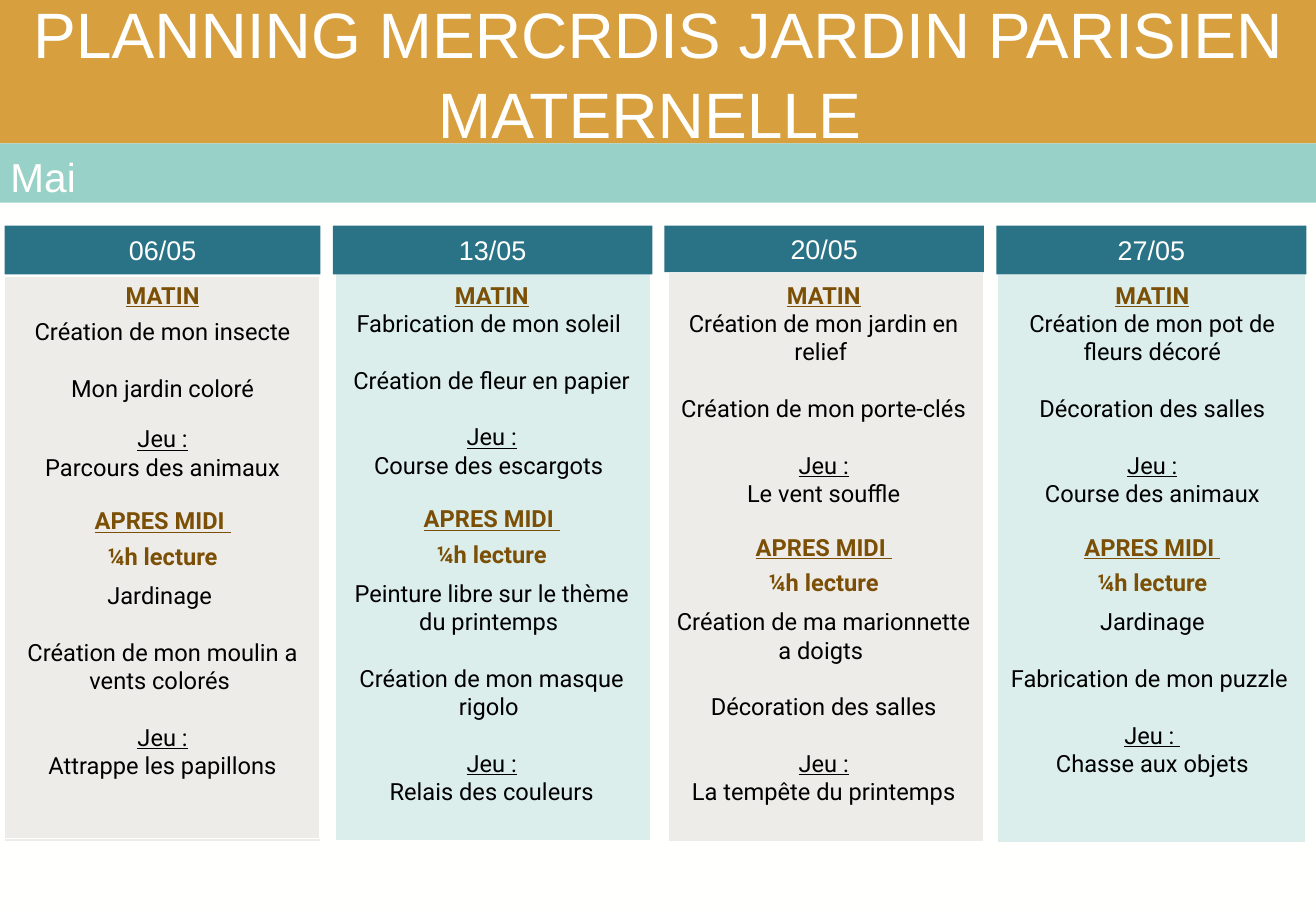
"""Build the May Wednesday planning slide for the nursery school."""
from lxml import etree
from pptx import Presentation
from pptx import util as u
from pptx.dml import color
from pptx.enum import shapes, text
from pptx.oxml import ns

COLOURS = {
    "paper": "FFFFFE",
    "gold": "D89F3F",
    "mint": "98D1C8",
    "teal": "2A7387",
    "grey": "EEECE8",
    "brown": "7B5006",
    "black": "000000",
}
LINE_GAP = 16.8
MINT_ALPHA = 35

COLUMNS = [
    {
        "date": "06/05",
        "header": (0.1, 4.72, 6.6, 1.02),
        "panel": (0.1, 5.79, 6.6, 11.81),
        "text": (0.1, 5.74, 6.6, 11.84),
        "fill": "grey",
        "gaps": (5, 13),
        "morning": ("Création de mon insecte", "Mon jardin coloré",
                    "Jeu :", "Parcours des animaux"),
        "afternoon": ("Jardinage ", "Création de mon moulin a vents colorés ",
                      "Jeu :", "Attrappe les papillons"),
    },
    {
        "date": "13/05",
        "header": (6.96, 4.72, 6.68, 1.02),
        "panel": (7.01, 5.69, 6.6, 11.89),
        "text": (6.93, 5.74, 6.7, 11.84),
        "fill": "mint",
        "gaps": (0, LINE_GAP),
        "morning": ("Fabrication de mon soleil ", "Création de fleur en papier",
                    "Jeu :", "Course des escargots "),
        "afternoon": ("Peinture libre sur le thème du printemps ",
                      "Création de mon masque rigolo ",
                      "Jeu :", "Relais des couleurs"),
    },
    {
        "date": "20/05",
        "header": (13.89, 4.72, 6.68, 0.97),
        "panel": (13.97, 5.69, 6.6, 11.91),
        "text": (13.87, 5.74, 6.7, 11.84),
        "fill": "grey",
        "gaps": (0, LINE_GAP),
        "morning": ("Création de mon jardin en relief ", "Création de mon porte-clés",
                    "Jeu :", "Le vent souffle"),
        "afternoon": ("Création de ma marionnette a doigts ", "Décoration des salles",
                      "Jeu :", "La tempête du printemps"),
    },
    {
        "date": "27/05",
        "header": (20.83, 4.72, 6.48, 1.02),
        "panel": (20.85, 5.74, 6.45, 11.89),
        "text": (20.85, 5.74, 6.48, 11.84),
        "fill": "mint",
        "gaps": (0, LINE_GAP),
        "morning": ("Création de mon pot de fleurs décoré", "Décoration des salles",
                    "Jeu :", "Course des animaux"),
        "afternoon": ("Jardinage", "Fabrication de mon puzzle ",
                      "Jeu : ", "Chasse aux objets"),
    },
]


def rgb(name):
    return color.RGBColor.from_string(COLOURS[name])


def place(shape, frame):
    shape.left, shape.top, shape.width, shape.height = map(u.Cm, frame)


def paint(shape, fill):
    shape.fill.solid()
    shape.fill.fore_color.rgb = rgb(fill)


def add_rect(page, frame, fill=None, outlined=False):
    box = page.shapes.add_shape(shapes.MSO_SHAPE.RECTANGLE, *map(u.Cm, frame))
    box.shadow.inherit = False
    if fill:
        paint(box, fill)
    else:
        box.fill.background()
    if outlined:
        box.line.color.rgb = rgb("paper")
        box.line.width = u.Pt(0.75)
    else:
        box.line.fill.background()
    return box


def add_span(para, words, size, font, colour, bold=False, underline=False):
    span = para.add_run()
    span.text = words
    span.font.size = u.Pt(size)
    span.font.name = font
    span.font.color.rgb = rgb(colour)
    span.font.bold = bold
    span.font.underline = underline


def write_label(box, words, size, align, anchor):
    frame = box.text_frame
    frame.word_wrap = True
    frame.auto_size = text.MSO_AUTO_SIZE.NONE
    frame.vertical_anchor = anchor
    para = frame.paragraphs[0]
    para.alignment = align
    para.space_before = u.Pt(0)
    add_span(para, words, size, "Arial", "paper")


def add_panel(page, column):
    panel = add_rect(page, column["panel"], column["fill"], outlined=True)
    if column["fill"] == "mint":
        tint = panel.element.find(".//" + ns.qn("a:srgbClr"))
        etree.SubElement(tint, ns.qn("a:alpha"), val=str(MINT_ALPHA * 1000))
    return panel


def programme(column):
    """List each line as words, space before and whether it is a heading."""
    first_gap, game_gap = column["gaps"]
    craft, second, game, game_name = column["morning"]
    yield "MATIN", 0, True
    yield craft, first_gap, False
    yield second, LINE_GAP, False
    yield game, game_gap, False
    yield game_name, 0, False
    yield "APRES MIDI ", LINE_GAP, True
    yield "¼h lecture", 0, True
    for words, gap in zip(column["afternoon"], (0, LINE_GAP, LINE_GAP, 0)):
        yield words, gap, False


def write_programme(body, column):
    place(body, column["text"])
    frame = body.text_frame
    frame.word_wrap = True
    frame.auto_size = text.MSO_AUTO_SIZE.NONE
    frame.vertical_anchor = text.MSO_ANCHOR.TOP
    for number, (words, gap, heading) in enumerate(programme(column)):
        para = frame.add_paragraph() if number else frame.paragraphs[0]
        props = para._p.get_or_add_pPr()
        props.set("marL", "0")
        props.set("indent", "0")
        etree.SubElement(props, ns.qn("a:buNone"))
        para.alignment = text.PP_ALIGN.CENTER
        para.space_before = u.Pt(gap)
        if heading and number:
            para.line_spacing = 0.9
            para.space_after = u.Pt(6)
        underline = words.startswith("Jeu") or (heading and "lecture" not in words)
        add_span(para, words, 14, "Roboto", "brown" if heading else "black",
                 heading, underline)


def main():
    deck = Presentation()
    deck.slide_width, deck.slide_height = u.Cm(27.51), u.Cm(19.05)
    page = deck.slides.add_slide(deck.slide_layouts.get_by_name("Comparison"))
    page.background.fill.solid()
    page.background.fill.fore_color.rgb = rgb("paper")
    centre, middle = text.PP_ALIGN.CENTER, text.MSO_ANCHOR.MIDDLE

    title = page.shapes.title
    place(title, (0, 0, 27.53, 3))
    paint(title, "gold")
    write_label(title, "PLANNING MERCRDIS JARDIN PARISIEN MATERNELLE ", 38, centre, middle)
    title.text_frame.paragraphs[0].line_spacing = 1.04

    panels = [add_panel(page, column) for column in reversed(COLUMNS)]
    panels.append(add_rect(page, (0.08, 5.69, 6.6, 11.84), outlined=True))
    for panel in panels:
        title.element.addprevious(panel.element)

    month = add_rect(page, (-0.03, 3, 27.56, 1.24), "mint")
    write_label(month, "Mai", 24, text.PP_ALIGN.LEFT, text.MSO_ANCHOR.TOP)
    month.text_frame.margin_top = u.Cm(0.18)

    bodies = [holder for holder in page.placeholders if holder.placeholder_format.idx]
    for body, column in zip(bodies, COLUMNS):
        write_programme(body, column)
        header = add_rect(page, column["header"], "teal")
        write_label(header, column["date"], 16, centre, middle)

    deck.save("out.pptx")


if __name__ == "__main__":
    main()
